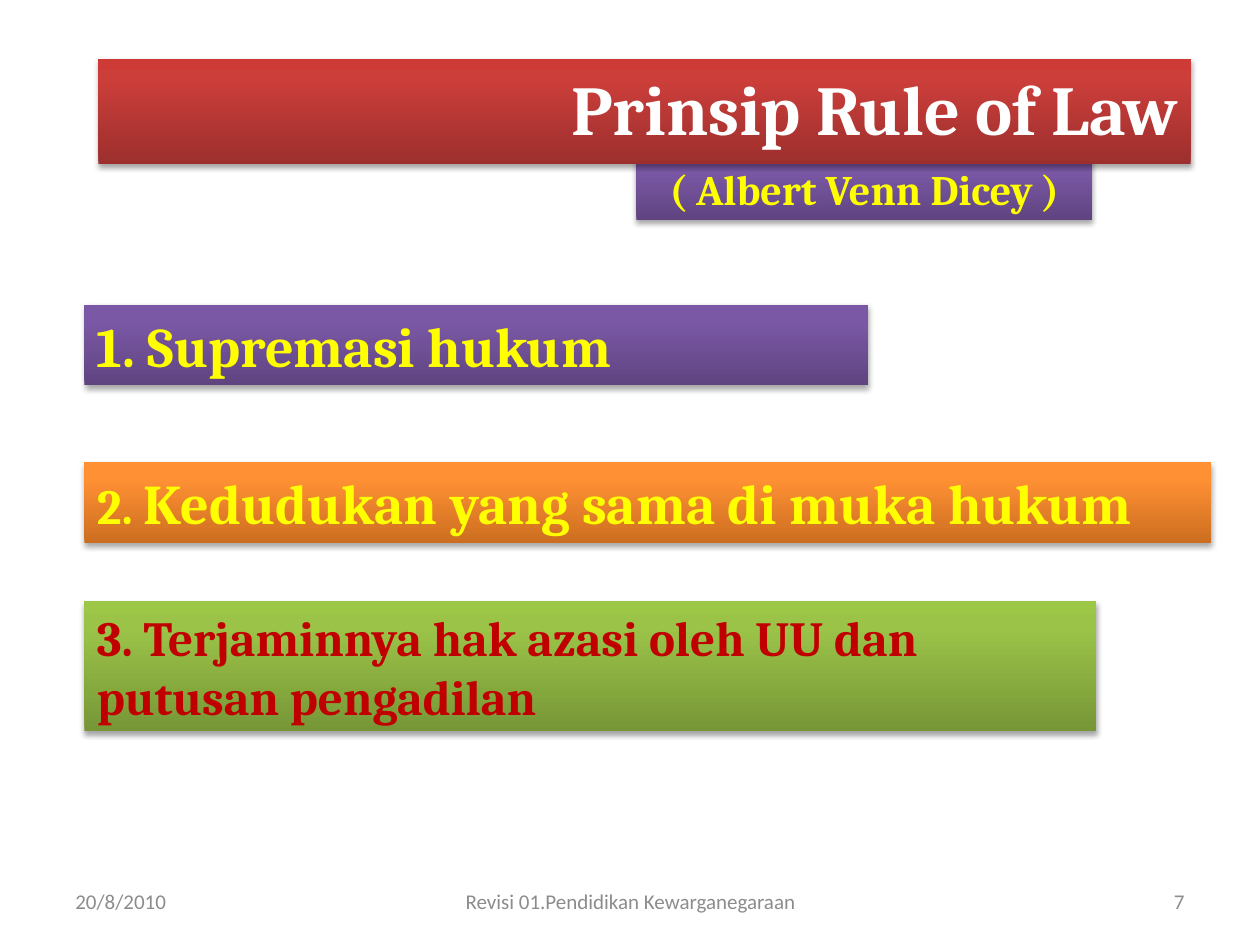
from lxml.etree import SubElement
from pptx import Presentation
from pptx.dml.color import RGBColor
from pptx.enum.shapes import MSO_SHAPE
from pptx.enum.text import MSO_ANCHOR, MSO_AUTO_SIZE, PP_ALIGN
from pptx.oxml.ns import qn
from pptx.util import Inches, Pt

RED = ("9C2F2D", "CB3E3A", "CE3B37")
PURPLE = ("5F4480", "7B58A6", "7C57A8")
ORANGE = ("CC6E20", "FF9034", "FF9136")
GREEN = ("779737", "9BC348", "9DC746")
STOPS = (0, 80, 100)
YELLOW, DARK_RED, WHITE, GREY = "FFFF00", "C00000", "FFFFFF", "8C8C8C"
LEFT, CENTER, RIGHT = PP_ALIGN.LEFT, PP_ALIGN.CENTER, PP_ALIGN.RIGHT

TITLE = ("Prinsip Rule of Law", (0.78, 0.47, 8.67, 0.77))
BANNERS = [
    ([("( Albert Venn Dicey )", 24)], (5.05, 1.25, 3.62, 0.5), PURPLE, YELLOW, CENTER),
    ([("1. Supremasi hukum", 32)], (0.67, 2.42, 6.22, 0.64), PURPLE, YELLOW, LEFT),
    ([("2. ", 28), ("Kedudukan yang sama di muka hukum", 32)],
     (0.67, 3.67, 8.94, 0.64), ORANGE, YELLOW, LEFT),
    ([("3. Terjaminnya hak azasi oleh UU dan putusan pengadilan", 28)],
     (0.67, 4.77, 8.03, 1.03), GREEN, DARK_RED, LEFT),
]
FOOTERS = [
    ("20/8/2010", 0.5, 2.33, LEFT),
    ("Revisi 01.Pendidikan Kewarganegaraan", 3.42, 3.17, CENTER),
    ("7", 7.17, 2.33, RIGHT),
]


def color(value):
    return RGBColor.from_string(value)


def add_color(parent, value):
    return SubElement(parent, qn("a:srgbClr"), val=value)


def write(shape, runs, ink, align, font="Cambria", bold=True, anchor=MSO_ANCHOR.TOP,
          auto_size=MSO_AUTO_SIZE.SHAPE_TO_FIT_TEXT):
    frame = shape.text_frame
    frame.word_wrap = True
    frame.auto_size = auto_size
    frame.vertical_anchor = anchor
    paragraph = frame.paragraphs[0]
    paragraph.alignment = align
    for text, size in runs:
        run = paragraph.add_run()
        run.text = text
        run.font.name = font
        run.font.size = Pt(size)
        run.font.bold = bold
        run.font.color.rgb = color(ink)


def decorate(shape, shades):
    shape.fill.gradient()
    shape.fill.gradient_angle = 90
    properties = shape._element.spPr
    stop_list = properties.find(".//" + qn("a:gsLst"))
    for stop in list(stop_list):
        stop_list.remove(stop)
    for position, shade in zip(STOPS, shades):
        add_color(SubElement(stop_list, qn("a:gs"), pos=str(position * 1000)), shade)
    shape.line.fill.background()
    shape.shadow.inherit = False
    shadow = SubElement(properties.find(qn("a:effectLst")), qn("a:outerShdw"),
                        blurRad=str(Pt(3.1)), dist=str(Pt(1.8)), dir="5400000", rotWithShape="0")
    SubElement(add_color(shadow, "000000"), qn("a:alpha"), val="35000")


def main():
    presentation = Presentation()
    presentation.slide_width, presentation.slide_height = Inches(10), Inches(7.5)
    slide = presentation.slides.add_slide(presentation.slide_layouts[5])
    shapes = slide.shapes

    for text, left, width, align in FOOTERS:
        box = shapes.add_textbox(*map(Inches, (left, 6.95, width, 0.4)))
        write(box, [(text, 12)], GREY, align, font="Calibri", bold=False,
              anchor=MSO_ANCHOR.MIDDLE, auto_size=MSO_AUTO_SIZE.NONE)

    for runs, bounds, shades, ink, align in BANNERS:
        banner = shapes.add_shape(MSO_SHAPE.RECTANGLE, *map(Inches, bounds))
        decorate(banner, shades)
        write(banner, runs, ink, align)

    title = shapes.title
    text, bounds = TITLE
    title.left, title.top, title.width, title.height = map(Inches, bounds)
    decorate(title, RED)
    write(title, [(text, 40)], WHITE, RIGHT)
    shapes._spTree.append(title._element)

    presentation.save("out.pptx")


if __name__ == "__main__":
    main()
